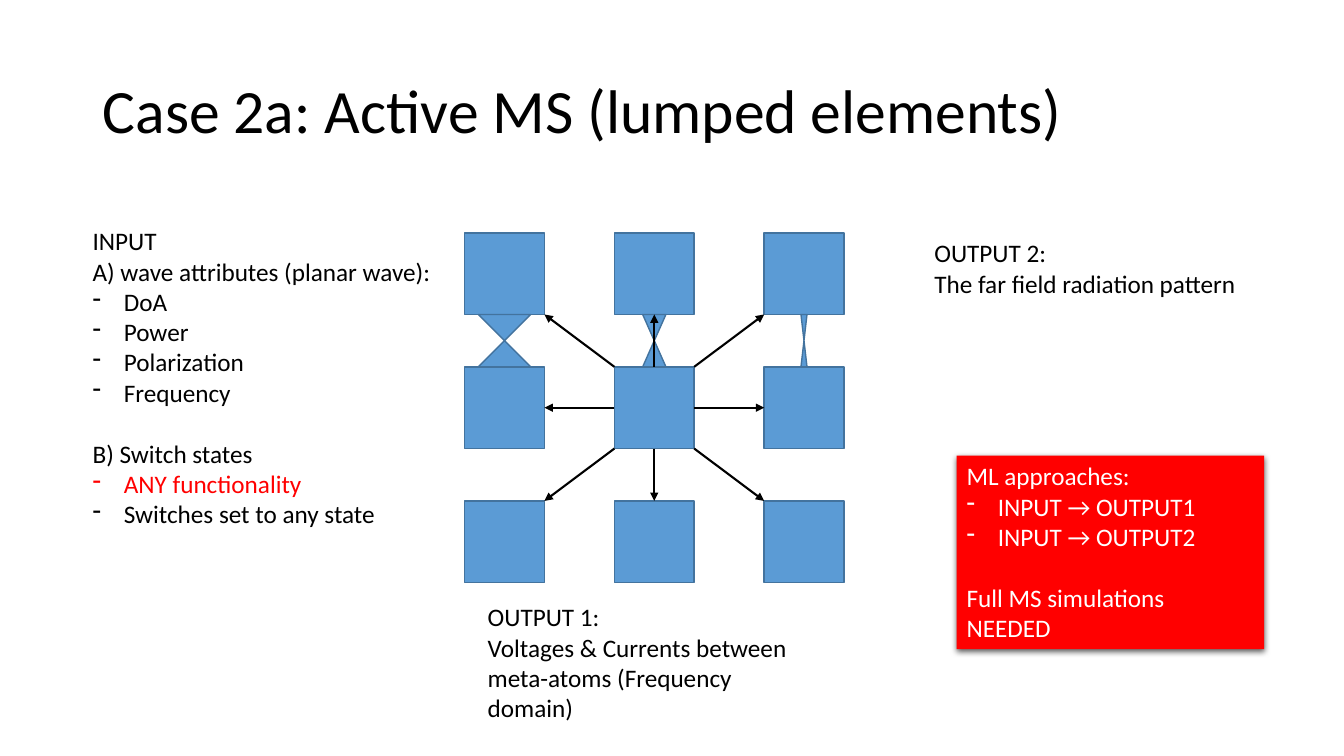
from dataclasses import dataclass
from itertools import product

from lxml import etree
from pptx import Presentation
from pptx import util as u
from pptx.dml.color import RGBColor
from pptx.enum import shapes, text
from pptx.oxml import parse_xml
from pptx.oxml.ns import nsdecls, qn

COLORS = {"black": "000000", "white": "FFFFFF", "red": "FF0000",
          "tile": "5B9BD5", "edge": "43739E"}
FONT = "Calibri"
BODY_SIZE = 18
BLANK_LINE = u.Pt(22)

deck = Presentation()
deck.slide_width, deck.slide_height = u.Inches(13.33), u.Inches(7.5)


def across(percent: float) -> int:
    return round(deck.slide_width * percent / 100)


def down(percent: float) -> int:
    return round(deck.slide_height * percent / 100)


@dataclass(frozen=True)
class Area:
    """A rectangle in percent of the slide's width and height."""
    left: float
    top: float
    width: float
    height: float

    def place(self) -> tuple[int, int, int, int]:
        return across(self.left), down(self.top), across(self.width), down(self.height)


@dataclass(frozen=True)
class Line:
    text: str
    dash: bool = False
    color: str = ""
    gap: bool = False


@dataclass(frozen=True)
class Note:
    area: Area
    lines: tuple[Line, ...]
    color: str = "black"
    fill: str = ""


# Grid of meta-atoms, in percent of the slide
FIRST_TILE = Area(34.58, 30.8, 5.93, 10.8)
PITCH_X, PITCH_Y = 11.14, 17.73
SWITCH_WIDTHS = (3.9, 1.73, 0.45)

TITLE_AREA = Area(6.9, 5.33, 86.25, 19.33)
NOTES = (
    Note(Area(6.15, 29.2, 27.15, 41.73), (
        Line("INPUT"),
        Line("A) wave attributes (planar wave):"),
        Line("DoA", dash=True),
        Line("Power", dash=True),
        Line("Polarization", dash=True),
        Line("Frequency", dash=True),
        Line("B) Switch states", gap=True),
        Line("ANY functionality", dash=True, color="red"),
        Line("Switches set to any state", dash=True))),
    Note(Area(35.55, 78.93, 25.8, 17.47), (
        Line("OUTPUT 1:"),
        Line("Voltages & Currents between meta-atoms (Frequency domain)"))),
    Note(Area(68.78, 30.8, 25.8, 9.47), (
        Line("OUTPUT 2:"),
        Line("The far field radiation pattern"))),
    Note(Area(71.18, 60.27, 22.88, 25.6), (
        Line("ML approaches:"),
        Line("INPUT → OUTPUT1", dash=True),
        Line("INPUT → OUTPUT2", dash=True),
        Line("Full MS simulations NEEDED", gap=True)), color="white", fill="red"),
)


def rgb(name: str) -> RGBColor:
    return RGBColor.from_string(COLORS[name])


def style_runs(para, size: int, color: str) -> None:
    for span in para.runs:
        span.font.name, span.font.size = FONT, u.Pt(size)
        span.font.color.rgb = rgb(color)


def add_title(slide, wording: str) -> None:
    title = slide.shapes.title
    title.left, title.top, title.width, title.height = TITLE_AREA.place()
    frame = title.text_frame
    frame.text = wording
    frame.vertical_anchor = text.MSO_ANCHOR.MIDDLE
    para = frame.paragraphs[0]
    para.alignment, para.line_spacing = text.PP_ALIGN.LEFT, 0.9
    style_runs(para, 44, "black")


def add_part(slide, kind, area: Area) -> None:
    """Draw a blue tile or switch."""
    part = slide.shapes.add_shape(kind, *area.place())
    part.shadow.inherit = False
    part.fill.solid()
    part.fill.fore_color.rgb = rgb("tile")
    part.line.color.rgb, part.line.width = rgb("edge"), u.Pt(1)


def add_arrow(slide, step_x: int, step_y: int) -> None:
    """Link the central tile to the neighbour that lies one step away."""
    center_x = FIRST_TILE.left + PITCH_X + FIRST_TILE.width / 2
    center_y = FIRST_TILE.top + PITCH_Y + FIRST_TILE.height / 2
    near_x, near_y = FIRST_TILE.width / 2, FIRST_TILE.height / 2
    far_x, far_y = PITCH_X - near_x, PITCH_Y - near_y
    arrow = slide.shapes.add_connector(
        shapes.MSO_CONNECTOR.STRAIGHT,
        across(center_x + step_x * near_x), down(center_y + step_y * near_y),
        across(center_x + step_x * far_x), down(center_y + step_y * far_y))
    arrow.line.color.rgb, arrow.line.width = rgb("black"), u.Pt(1.5)
    properties = arrow.element.spPr
    etree.SubElement(properties.find(qn("a:ln")), qn("a:tailEnd"), type="triangle")
    etree.SubElement(properties, qn("a:effectLst"))


def add_dash(para) -> None:
    properties = para._p.get_or_add_pPr()
    properties.set("marL", str(u.Inches(0.31)))
    properties.set("indent", str(-u.Inches(0.31)))
    etree.SubElement(properties, qn("a:buFontTx"))
    etree.SubElement(properties, qn("a:buChar"), char="-")


def add_panel(slide, note: Note):
    """Draw the filled rectangle with a soft shadow below it."""
    panel = slide.shapes.add_shape(shapes.MSO_SHAPE.RECTANGLE, *note.area.place())
    panel.fill.solid()
    panel.fill.fore_color.rgb = rgb(note.fill)
    panel.line.fill.background()
    panel.shadow.inherit = False
    panel.element.spPr.find(qn("a:effectLst")).append(parse_xml(
        f'<a:outerShdw {nsdecls("a")} blurRad="{u.Pt(4.5)}" dist="{u.Pt(1.5)}" '
        f'dir="5400000" algn="ctr" rotWithShape="0"><a:srgbClr val="{COLORS["black"]}">'
        '<a:alpha val="63000"/></a:srgbClr></a:outerShdw>'))
    return panel


def add_note(slide, note: Note) -> None:
    box = add_panel(slide, note) if note.fill else slide.shapes.add_textbox(*note.area.place())
    frame = box.text_frame
    frame.word_wrap = True
    frame.vertical_anchor = text.MSO_ANCHOR.TOP
    frame.text = "\n".join(line.text for line in note.lines)
    for para, line in zip(frame.paragraphs, note.lines):
        para.alignment = text.PP_ALIGN.LEFT
        if line.gap:
            para.space_before = BLANK_LINE
        if line.dash:
            add_dash(para)
        style_runs(para, BODY_SIZE, line.color or note.color)


def add_meta_atoms(slide) -> None:
    for row, column in product(range(3), repeat=2):
        add_part(slide, shapes.MSO_SHAPE.RECTANGLE, Area(
            FIRST_TILE.left + column * PITCH_X, FIRST_TILE.top + row * PITCH_Y,
            FIRST_TILE.width, FIRST_TILE.height))
    for column, width in enumerate(SWITCH_WIDTHS):
        center = FIRST_TILE.left + column * PITCH_X + FIRST_TILE.width / 2
        add_part(slide, shapes.MSO_SHAPE.FLOWCHART_COLLATE, Area(
            center - width / 2, FIRST_TILE.top + FIRST_TILE.height,
            width, PITCH_Y - FIRST_TILE.height))
    for step_x, step_y in product((-1, 0, 1), repeat=2):
        if step_x or step_y:
            add_arrow(slide, step_x, step_y)


def main() -> None:
    slide = deck.slides.add_slide(deck.slide_layouts.get_by_name("Title Only"))
    add_title(slide, "Case 2a: Active MS (lumped elements)")
    add_meta_atoms(slide)
    for note in NOTES:
        add_note(slide, note)
    deck.save("out.pptx")


if __name__ == "__main__":
    main()
